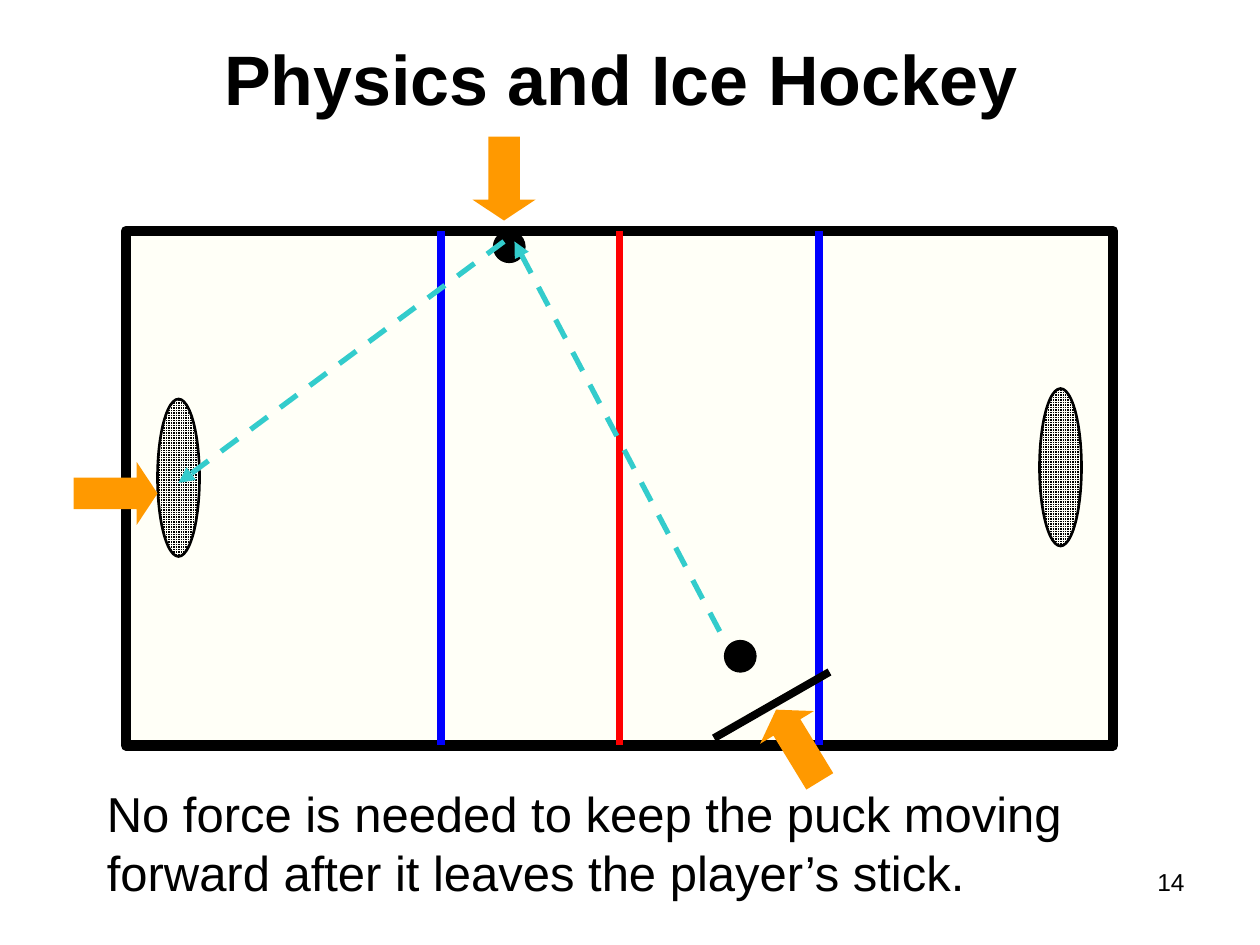
from typing import NamedTuple, Optional

import pptx
import pptx.dml.color
import pptx.enum.dml
import pptx.enum.shapes
import pptx.enum.text
import pptx.oxml
import pptx.oxml.ns
import pptx.util

RGBColor = pptx.dml.color.RGBColor
BLACK = RGBColor(0x00, 0x00, 0x00)
ICE = RGBColor(0xFF, 0xFF, 0xF7)
RED = RGBColor(0xFF, 0x00, 0x00)
BLUE = RGBColor(0x00, 0x00, 0xFF)
TEAL = RGBColor(0x33, 0xCC, 0xCC)
ORANGE = RGBColor(0xFF, 0x99, 0x00)

Kind = pptx.enum.shapes.MSO_SHAPE
Align = pptx.enum.text.PP_ALIGN
CELLS_PER_INCH = 12
RINK_TOP, RINK_BOTTOM = 22, 71


class Figure(NamedTuple):
    kind: Kind
    column: float
    row: float
    columns: float
    rows: float
    fill: RGBColor
    line_width: float = 0
    netted: bool = False
    rotation: float = 0


class Stroke(NamedTuple):
    start: tuple
    end: tuple
    color: RGBColor
    width: float = 4.5
    arrow: Optional[str] = None


def cells(count: float) -> int:
    return pptx.util.Inches(count / CELLS_PER_INCH)


def draw_figure(page, figure: Figure):
    shape = page.shapes.add_shape(
        figure.kind, *map(cells, (figure.column, figure.row, figure.columns, figure.rows)))
    shape.shadow.inherit = False
    shape.rotation = figure.rotation
    if figure.netted:
        shape.fill.patterned()
        shape.fill.pattern = pptx.enum.dml.MSO_PATTERN.SMALL_GRID
        shape.fill.fore_color.rgb = figure.fill
        shape.fill.back_color.rgb = BLACK
    else:
        shape.fill.solid()
        shape.fill.fore_color.rgb = figure.fill
    if figure.line_width:
        shape.line.color.rgb = BLACK
        shape.line.width = pptx.util.Pt(figure.line_width)
    else:
        shape.line.fill.background()
    if figure.kind == Kind.RIGHT_ARROW:
        shape.adjustments[0] = 0.5
        shape.adjustments[1] = 0.33
    return shape


def draw_stroke(page, stroke: Stroke):
    connector = page.shapes.add_connector(
        pptx.enum.shapes.MSO_CONNECTOR.STRAIGHT, *map(cells, stroke.start + stroke.end))
    connector.line.color.rgb = stroke.color
    connector.line.width = pptx.util.Pt(stroke.width)
    if stroke.arrow:
        connector.line.dash_style = pptx.enum.dml.MSO_LINE.DASH
        tip = pptx.oxml.parse_xml(
            f'<a:{stroke.arrow} {pptx.oxml.ns.nsdecls("a")} type="triangle"/>')
        connector.line._get_or_add_ln().append(tip)
    properties = connector._element.spPr
    properties.append(pptx.oxml.parse_xml(f'<a:effectLst {pptx.oxml.ns.nsdecls("a")}/>'))
    return connector


def write_text(page, text: str, *, left: float, top: float, width: float, height: float,
               size: float, bold: bool = False, align: Align = Align.LEFT,
               wrap: bool = False) -> None:
    box = page.shapes.add_textbox(*map(pptx.util.Inches, (left, top, width, height)))
    frame = box.text_frame
    frame.word_wrap = wrap
    if not wrap:
        frame.auto_size = pptx.enum.text.MSO_AUTO_SIZE.SHAPE_TO_FIT_TEXT
    frame.text = text
    for para in frame.paragraphs:
        para.alignment = align
        for span in para.runs:
            span.font.name = "Arial"
            span.font.size = pptx.util.Pt(size)
            span.font.bold = bold
            span.font.color.rgb = BLACK


RINK = Figure(Kind.RECTANGLE, 12, RINK_TOP, 94, RINK_BOTTOM - RINK_TOP, ICE, 6)
CENTER_LINE = Stroke((59, RINK_TOP), (59, RINK_BOTTOM), RED)
BLUE_LINES = [Stroke((column, RINK_TOP), (column, RINK_BOTTOM), BLUE) for column in (78, 42)]
STICK = Stroke((68, 70.3), (79, 64), BLACK)
PUCKS = [Figure(Kind.OVAL, column, row, 3, 3, BLACK, 0.75)
         for column, row in ((69, 61), (47, RINK_TOP))]
GOALS = [Figure(Kind.OVAL, column, row, 4, 15, ICE, 1.5, netted=True)
         for column, row in ((15, 38), (99, 37))]
PATHS = [Stroke((49, 23), (69, 61), TEAL, 3, "headEnd"),
         Stroke((48, 23), (17, 46), TEAL, 3, "tailEnd")]
FORCES = [Figure(Kind.RIGHT_ARROW, column, row, 8, 6, ORANGE, rotation=rotation)
          for column, row, rotation in ((72, 68, 238.6), (44, 14, 90), (7, 44, 0))]


def main() -> None:
    deck = pptx.Presentation()
    deck.slide_width = pptx.util.Inches(10)
    deck.slide_height = pptx.util.Inches(7.5)
    page = deck.slides.add_slide(deck.slide_layouts[6])

    rink = draw_figure(page, RINK)
    center_line = draw_stroke(page, CENTER_LINE)
    center_line.begin_connect(rink, 0)
    center_line.end_connect(rink, 2)
    for stroke in BLUE_LINES + [STICK]:
        draw_stroke(page, stroke)
    for figure in PUCKS + GOALS:
        draw_figure(page, figure)
    for stroke in PATHS:
        draw_stroke(page, stroke)
    for figure in FORCES:
        draw_figure(page, figure)

    write_text(page, "Physics and Ice Hockey",
               left=1.68, top=0.23, width=6.56, height=0.77, size=40, bold=True)
    write_text(page, "No force is needed to keep the puck moving\n"
               "forward after it leaves the player’s stick.",
               left=0.75, top=6.17, width=7.8, height=1.03, size=28)
    write_text(page, "14", left=7.17, top=6.83, width=2.33, height=0.52, size=14,
               align=Align.RIGHT, wrap=True)
    deck.save("out.pptx")


if __name__ == "__main__":
    main()
